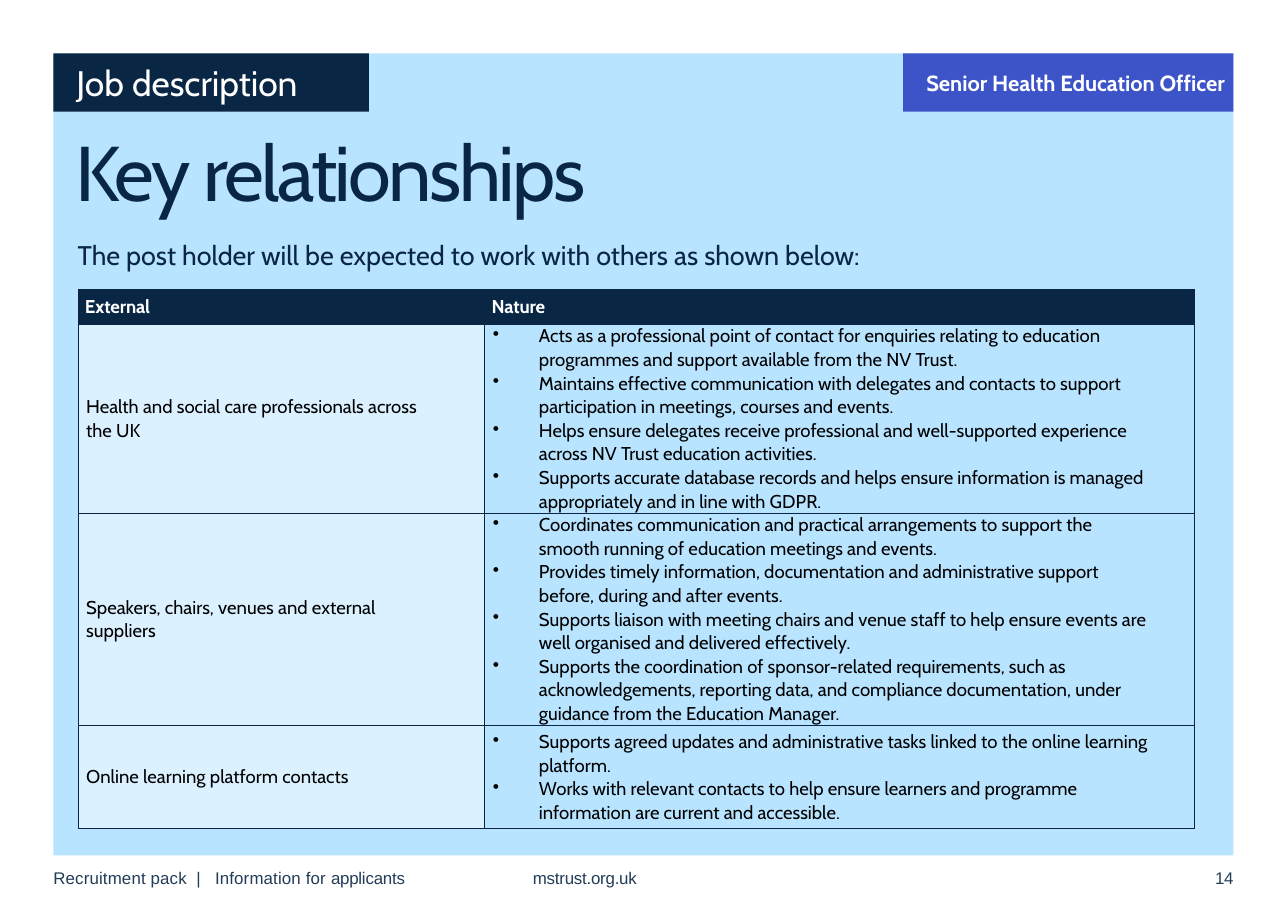
from lxml.etree import SubElement
from pptx import Presentation
from pptx.dml.color import RGBColor
from pptx.enum.shapes import MSO_SHAPE
from pptx.enum.text import MSO_ANCHOR, MSO_AUTO_SIZE, PP_ALIGN
from pptx.oxml import parse_xml
from pptx.oxml.ns import nsdecls, qn
from pptx.util import Inches, Pt

NAVY, SKY, PALE, BLUE = "0A2645", "B8E4FF", "DBF1FF", "3D54C9"
WHITE, BLACK, SLATE = "FFFFFF", "000000", "233C57"

HEAD = ["External", "Nature"]
ROWS = [
    ("Health and social care professionals across the UK", [
        "Acts as a professional point of contact for enquiries relating to education "
        "programmes and support available from the NV Trust.",
        "Maintains effective communication with delegates and contacts to support "
        "participation in meetings, courses and events.",
        "Helps ensure delegates receive professional and well-supported experience "
        "across NV Trust education activities.",
        "Supports accurate database records and helps ensure information is managed "
        "appropriately and in line with GDPR."]),
    ("Speakers, chairs, venues and external suppliers", [
        "Coordinates communication and practical arrangements to support the "
        "smooth running of education meetings and events.",
        "Provides timely information, documentation and administrative support "
        "before, during and after events.",
        "Supports liaison with meeting chairs and venue staff to help ensure events "
        "are well organised and delivered effectively.",
        "Supports the coordination of sponsor-related requirements, such as "
        "acknowledgements, reporting data, and compliance documentation, under "
        "guidance from the Education Manager."]),
    ("Online learning platform contacts", [
        "Supports agreed updates and administrative tasks linked to the online "
        "learning platform.",
        "Works with relevant contacts to help ensure learners and programme "
        "information are current and accessible."]),
]


def color(code):
    return RGBColor.from_string(code)


class Page:
    def __init__(self, slide, face="Cabin"):
        self.slide = slide
        self.face = face

    def run(self, para, text, size, ink, bold=False, gap=0, face=None):
        run = para.add_run()
        run.text = text
        font = run.font
        font.name, font.size, font.bold = face or self.face, Pt(size), bold
        font.color.rgb = color(ink)
        if gap:
            font._element.set("spc", str(round(gap * 100)))

    def frame(self, frame, left=0, anchor=MSO_ANCHOR.TOP):
        frame.word_wrap = True
        frame.auto_size = MSO_AUTO_SIZE.NONE
        frame.vertical_anchor = anchor
        frame.margin_left = Inches(left)
        frame.margin_top = frame.margin_right = frame.margin_bottom = 0
        para = frame.paragraphs[0]
        para.alignment = PP_ALIGN.LEFT
        para.space_before = Pt(0)
        return para

    def block(self, box, fill):
        shape = self.slide.shapes.add_shape(MSO_SHAPE.RECTANGLE, *map(Inches, box))
        shape.shadow.inherit = False
        shape.fill.solid()
        shape.fill.fore_color.rgb = color(fill)
        shape.line.fill.background()
        return shape

    def banner(self, box, fill, text, size, bold=False):
        shape = self.block(box, fill)
        para = self.frame(shape.text_frame, 0.19, MSO_ANCHOR.MIDDLE)
        self.run(para, text, size, WHITE, bold)

    def holder(self, index, box, text, size, gap=0):
        shape = self.slide.placeholders[index]
        shape.left, shape.top, shape.width, shape.height = map(Inches, box)
        shape.element.getparent().append(shape.element)  # bring to front
        para = self.frame(shape.text_frame)
        props = para._p.get_or_add_pPr()
        props.set("marL", "0")
        props.set("indent", "0")
        SubElement(props, qn("a:buNone"))
        self.run(para, text, size, NAVY, gap=gap)
        return para

    def note(self, box, *parts):
        shape = self.slide.shapes.add_textbox(*map(Inches, box))
        para = self.frame(shape.text_frame, 0.01)
        for text, gap in parts:
            self.run(para, text, 10, SLATE, gap=gap, face="Arial")

    def cell(self, cell, fill, left, right):
        cell.fill.solid()
        cell.fill.fore_color.rgb = color(fill)
        cell.vertical_anchor = MSO_ANCHOR.MIDDLE
        cell.margin_left, cell.margin_right = Inches(left), Inches(right)
        cell.margin_top = cell.margin_bottom = 0
        props = cell._tc.get_or_add_tcPr()
        for spot, side in enumerate("LRTB"):
            props.insert(spot, parse_xml(
                f'<a:ln{side} {nsdecls("a")} w="{Pt(0.25)}"><a:solidFill>'
                f'<a:srgbClr val="{NAVY}"/></a:solidFill></a:ln{side}>'))
        return cell.text_frame

    def lines(self, frame, texts, dots=False):
        for spot, text in enumerate(texts):
            para = frame.add_paragraph() if spot else frame.paragraphs[0]
            para.line_spacing = Pt(14)
            if dots:
                props = para._p.get_or_add_pPr()
                props.set("marL", str(Inches(0.38)))
                props.set("indent", str(-Inches(0.38)))
                SubElement(props, qn("a:buChar")).set("char", "•")
            self.run(para, text, 11, BLACK)

    def table(self, box, head, rows, widths, heights):
        shape = self.slide.shapes.add_table(
            len(rows) + 1, len(head), *map(Inches, box))
        table = shape.table
        for col, width in zip(table.columns, widths):
            col.width = Inches(width)
        for row, height in zip(table.rows, heights):
            row.height = Inches(height)
        for col, text in enumerate(head):
            frame = self.cell(table.cell(0, col), NAVY, 0.06, 0)
            self.run(frame.paragraphs[0], text, 11, WHITE, True, -0.1)
        for row, (group, tasks) in enumerate(rows, 1):
            self.lines(self.cell(table.cell(row, 0), PALE, 0.07, 0.36), [group])
            self.lines(self.cell(table.cell(row, 1), SKY, 0.07, 0.36), tasks, True)


def main():
    deck = Presentation()
    deck.slide_width, deck.slide_height = Inches(10.61), Inches(7.5)
    page = Page(deck.slides.add_slide(deck.slide_layouts[1]))

    # Panel and section banner
    page.block((0.44, 0.44, 9.72, 6.61), SKY)
    page.banner((0.44, 0.44, 2.6, 0.48), NAVY, "Job description", 21)

    # Title and lead
    title = page.holder(0, (0.62, 1.11, 9.13, 0.71), "Key relationships", 46, -1.5)
    title.line_spacing = 0.9
    page.holder(1, (0.64, 1.97, 8.35, 0.27),
                "The post holder will be expected to work with others as shown below:", 16)

    # Footer
    page.note((4.38, 7.15, 0.96, 0.21), ("mstrust.org.uk", -0.1))
    page.note((0.43, 7.15, 3.05, 0.21), ("Recruitment pack", 0.1), (" | ", 2.8),
              ("Information for ", 0.1), ("applicants", -0.1))
    page.note((10, 7.15, 0.21, 0.21), ("14", -0.2))

    # Relationships table
    page.table((0.64, 2.38, 9.2, 4.44), HEAD, ROWS,
               (3.35, 5.85), (0.29, 1.55, 1.75, 0.85))

    # Role banner
    page.banner((7.44, 0.44, 2.72, 0.48), BLUE,
                "Senior Health Education Officer", 13, True)

    deck.save("out.pptx")


if __name__ == "__main__":
    main()
